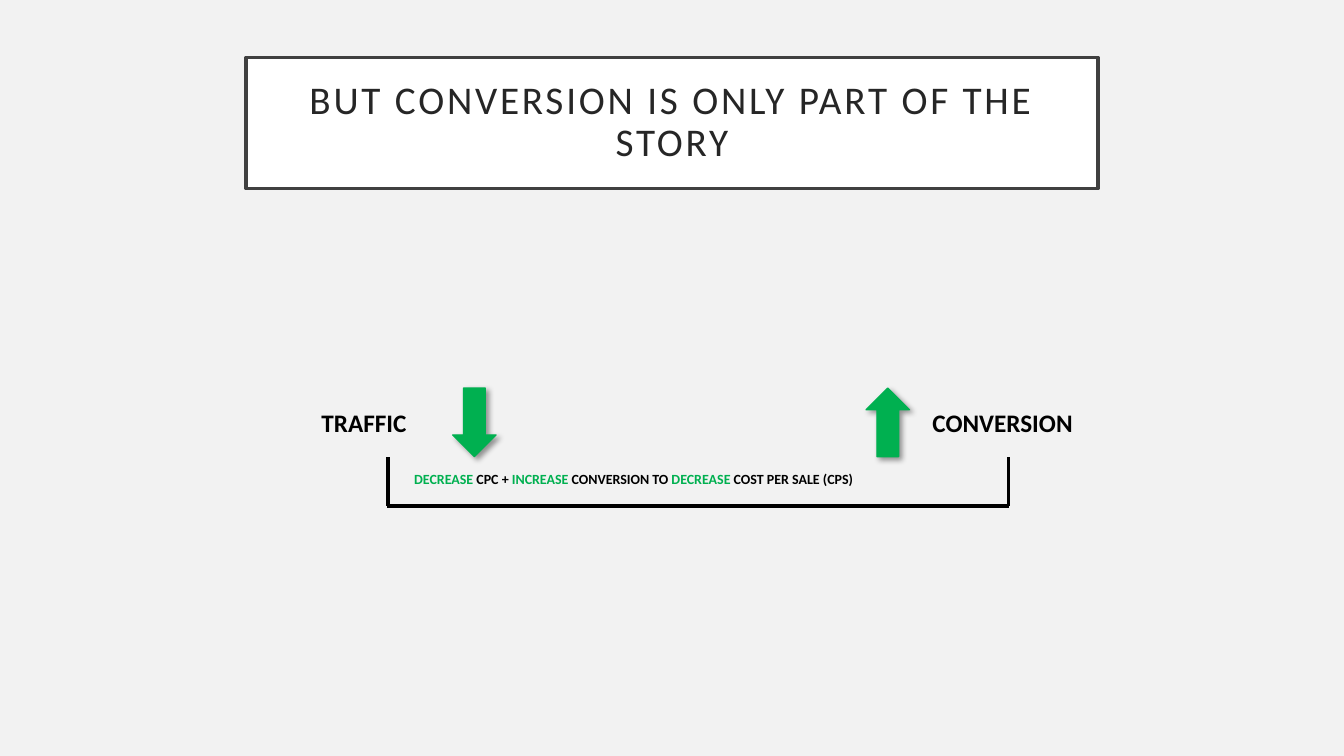
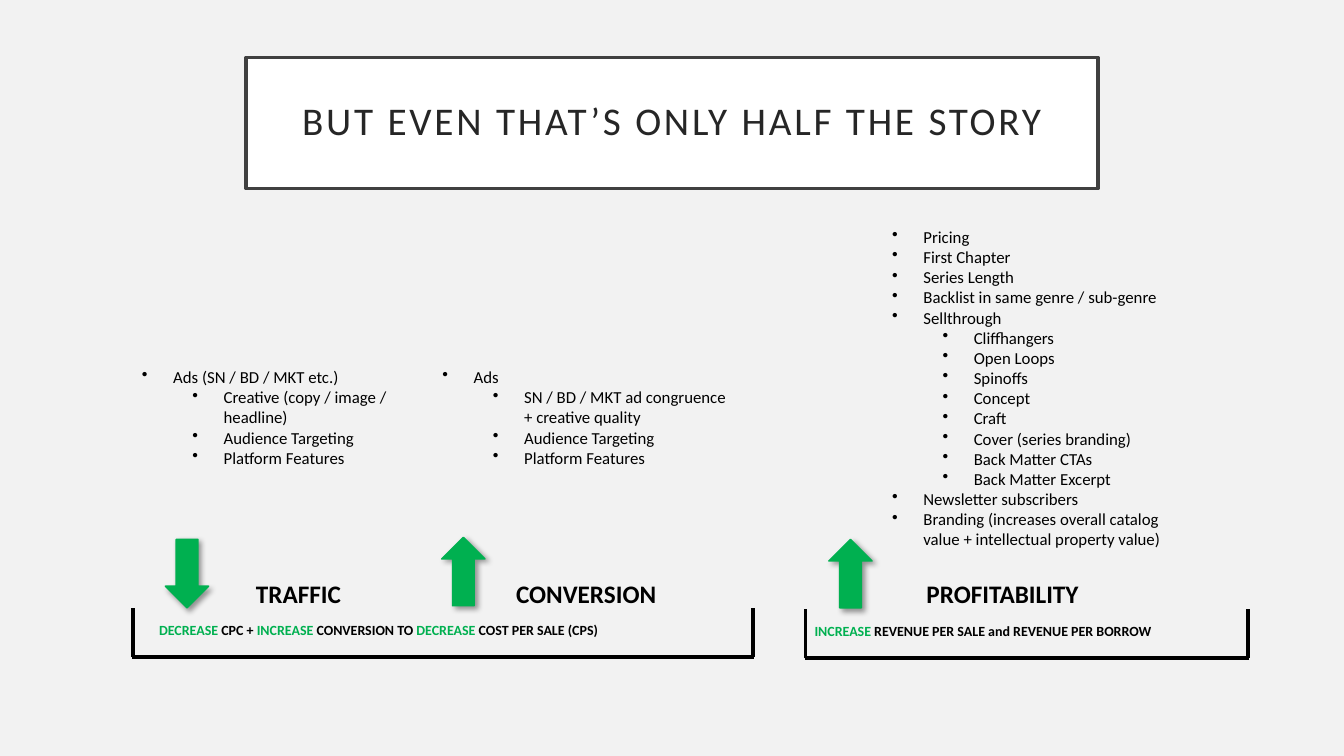
import lxml.etree
import pptx
import pptx.dml.color
import pptx.enum.shapes
import pptx.enum.text
import pptx.oxml.ns
import pptx.util

PX = 9144  # 100 px to the inch
SLIDE_WIDTH, SLIDE_HEIGHT = 1333, 750
FONT = "Calibri"
PAPER, WHITE, BLACK = "F2F2F2", "FFFFFF", "000000"
FRAME, TITLE_INK, GREEN = "404040", "262626", "00B050"
TITLE_BOX = (244, 57, 845, 130)
ARROW_WIDTH, ARROW_HEIGHT = 43, 68
BRACKET_HEIGHT = 49
BULLET_HANG, LEVEL_STEP = 31, 50

COST_CAPTION = ["DECREASE", " CPC + ", "INCREASE", " CONVERSION TO ",
                "DECREASE ", "COST PER SALE (CPS)"]
REVENUE_CAPTION = ["INCREASE", " REVENUE PER SALE and REVENUE PER BORROW"]

# Each item is (level, text).
TRAFFIC_ITEMS = [
    (0, "Ads (SN / BD / MKT etc.)"),
    (1, "Creative (copy / image / headline)"),
    (1, "Audience Targeting"),
    (1, "Platform Features"),
]
CONVERSION_ITEMS = [
    (0, "Ads"),
    (1, "SN / BD / MKT ad congruence + creative quality"),
    (1, "Audience Targeting"),
    (1, "Platform Features"),
]
PROFIT_ITEMS = [
    (0, "Pricing"),
    (0, "First Chapter"),
    (0, "Series Length"),
    (0, "Backlist in same genre / sub-genre"),
    (0, "Sellthrough"),
    (1, "Cliffhangers"),
    (1, "Open Loops"),
    (1, "Spinoffs"),
    (1, "Concept"),
    (1, "Craft"),
    (1, "Cover (series branding)"),
    (1, "Back Matter CTAs"),
    (1, "Back Matter Excerpt"),
    (0, "Newsletter subscribers"),
    (0, "Branding (increases overall catalog value + intellectual property value)"),
]


def px(*lengths):
    return [length * PX for length in lengths]


def color(code):
    return pptx.dml.color.RGBColor.from_string(code)


def add_element(parent, tag, **attributes):
    element = lxml.etree.SubElement(parent, pptx.oxml.ns.qn(tag))
    for name, value in attributes.items():
        element.set(name, str(value))
    return element


def style_font(font, size, ink, bold=False):
    font.name = FONT
    font.size = pptx.util.Pt(size)
    font.color.rgb = color(ink)
    font.bold = bold


def style_shape(shape, fill, line, line_width):
    shape.shadow.inherit = False
    shape.fill.solid()
    shape.fill.fore_color.rgb = color(fill)
    shape.line.color.rgb = color(line)
    shape.line.width = pptx.util.Pt(line_width)


def add_text_frame(page, box):
    frame = page.shapes.add_textbox(*px(*box)).text_frame
    frame.word_wrap = True
    return frame


def add_titled_page(deck, title):
    page = deck.slides.add_slide(deck.slide_layouts[6])
    page.background.fill.solid()
    page.background.fill.fore_color.rgb = color(PAPER)
    box = page.shapes.add_shape(pptx.enum.shapes.MSO_SHAPE.RECTANGLE, *px(*TITLE_BOX))
    style_shape(box, WHITE, FRAME, 2.5)
    frame = box.text_frame
    frame.word_wrap = True
    frame.vertical_anchor = pptx.enum.text.MSO_ANCHOR.MIDDLE
    inset = 20 * PX
    frame.margin_left = frame.margin_right = inset
    frame.margin_top = frame.margin_bottom = inset
    frame.text = title
    para = frame.paragraphs[0]
    para.alignment = pptx.enum.text.PP_ALIGN.CENTER
    para.line_spacing = 0.9
    span = para.runs[0]
    style_font(span.font, 28, TITLE_INK)
    span.font._element.set("spc", "200")
    return page


def add_label(page, left, top, text):
    frame = add_text_frame(page, (left, top, 220, 40))
    frame.text = text
    style_font(frame.paragraphs[0].runs[0].font, 18, BLACK, bold=True)


def add_arrow(page, left, top, up=False):
    """Green block arrow with a soft shadow to the lower right."""
    arrow = page.shapes.add_shape(pptx.enum.shapes.MSO_SHAPE.DOWN_ARROW,
                                  *px(left, top, ARROW_WIDTH, ARROW_HEIGHT))
    arrow.rotation = 180 if up else 0
    style_shape(arrow, GREEN, GREEN, 1)
    effects = arrow._element.spPr.find(pptx.oxml.ns.qn("a:effectLst"))
    shadow = add_element(effects, "a:outerShdw", blurRad=pptx.util.Pt(4),
                         dist=pptx.util.Pt(3), dir=45 * 60000, algn="tl", rotWithShape=0)
    shade = add_element(shadow, "a:srgbClr", val=BLACK)
    add_element(shade, "a:alpha", val=40000)


def add_line(page, *ends):
    line = page.shapes.add_connector(pptx.enum.shapes.MSO_CONNECTOR.STRAIGHT, *px(*ends))
    line.line.color.rgb = color(BLACK)
    line.line.width = pptx.util.Pt(2.5)
    add_element(line._element.spPr, "a:effectLst")


def add_bracket(page, left, top, width, caption, indent):
    """Open-topped bracket; caption phrases alternate green and black."""
    right, bottom = left + width, top + BRACKET_HEIGHT
    add_line(page, left, bottom, right, bottom)
    for side in (left + 1, right - 1):
        add_line(page, side, bottom, side, top)
    frame = add_text_frame(page, (left + indent, top + 9, width - indent, 44))
    para = frame.paragraphs[0]
    for index, phrase in enumerate(caption):
        span = para.add_run()
        span.text = phrase
        style_font(span.font, 10, BLACK if index % 2 else GREEN, bold=True)


def add_bullets(page, box, items):
    frame = add_text_frame(page, box)
    frame.text = "\n".join(text for level, text in items)
    for para, (level, text) in zip(frame.paragraphs, items):
        para.level = level
        properties = para._p.get_or_add_pPr()
        properties.set("marL", str((BULLET_HANG + level * LEVEL_STEP) * PX))
        properties.set("indent", str(-BULLET_HANG * PX))
        add_element(properties, "a:buChar", char="•")
        style_font(para.runs[0].font, 12, BLACK)


def build_conversion_page(deck):
    page = add_titled_page(deck, "BUT CONVERSION IS ONLY PART OF THE STORY")
    add_label(page, 309, 399, "TRAFFIC")
    add_label(page, 915, 399, "CONVERSION")
    add_bracket(page, 384, 453, 617, COST_CAPTION, 17)
    add_arrow(page, 449, 385)
    add_arrow(page, 859, 385, up=True)


def build_profitability_page(deck):
    page = add_titled_page(deck, "BUT EVEN THAT’S ONLY HALF THE STORY")
    for left, text in ((244, "TRAFFIC"), (502, "CONVERSION"), (909, "PROFITABILITY")):
        add_label(page, left, 569, text)
    add_bracket(page, 131, 603, 617, COST_CAPTION, 17)
    add_bracket(page, 798, 604, 441, REVENUE_CAPTION, 0)
    add_arrow(page, 164, 535)
    add_arrow(page, 438, 533, up=True)
    add_arrow(page, 822, 535, up=True)
    add_bullets(page, (131, 359, 281, 111), TRAFFIC_ITEMS)
    add_bullets(page, (429, 359, 308, 111), CONVERSION_ITEMS)
    add_bullets(page, (875, 220, 308, 333), PROFIT_ITEMS)


def main():
    deck = pptx.Presentation()
    deck.slide_width, deck.slide_height = px(SLIDE_WIDTH, SLIDE_HEIGHT)
    build_conversion_page(deck)
    build_profitability_page(deck)
    deck.save("out.pptx")


if __name__ == "__main__":
    main()
